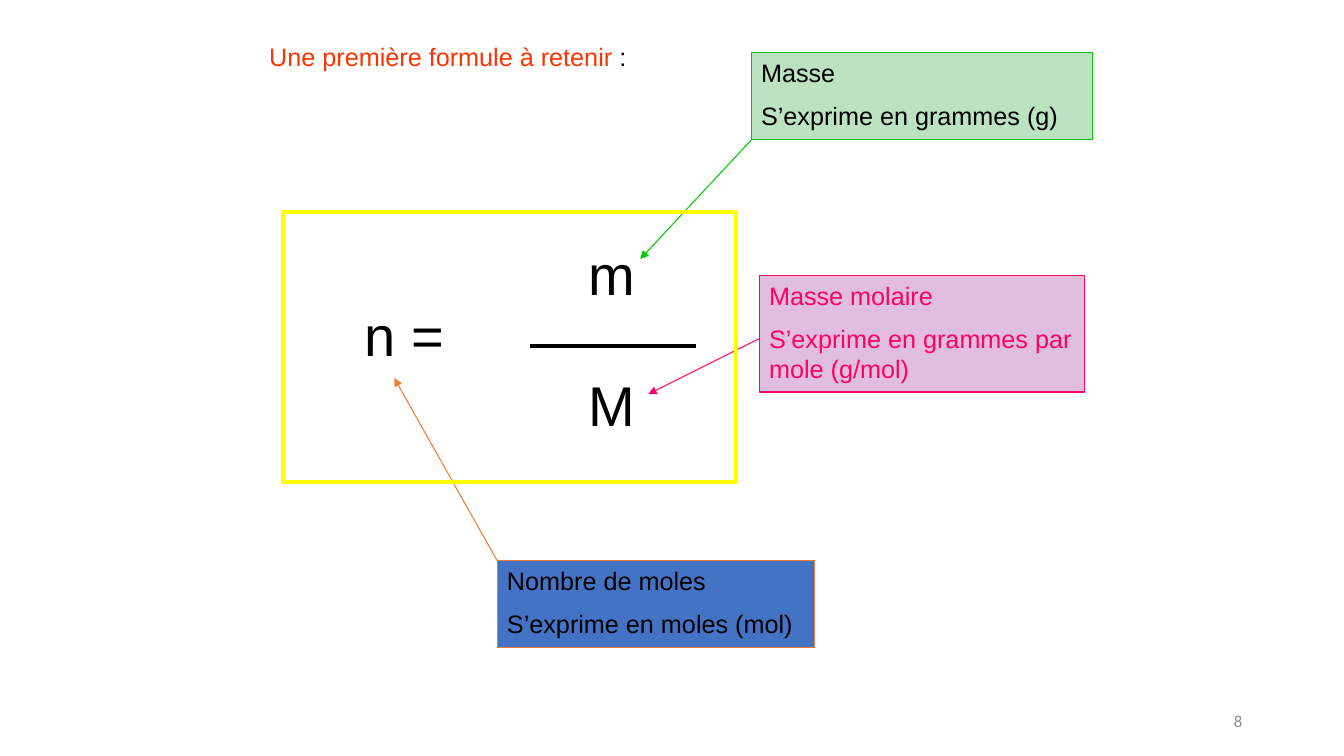
from lxml import etree
from pptx import Presentation
from pptx.dml.color import RGBColor
from pptx.enum import shapes, text
from pptx.oxml import ns
from pptx.util import Inches, Pt

BLACK = RGBColor(0x00, 0x00, 0x00)
RED = RGBColor(0xFF, 0x33, 0x00)
ORANGE = RGBColor(0xED, 0x7D, 0x31)
BLUE = RGBColor(0x44, 0x72, 0xC4)
GREEN = RGBColor(0x00, 0xCC, 0x00)
PALE_GREEN = RGBColor(0xBB, 0xE3, 0xC1)
PINK = RGBColor(0xFF, 0x00, 0x66)
PALE_PINK = RGBColor(0xE1, 0xBD, 0xDE)
YELLOW = RGBColor(0xFF, 0xFF, 0x00)
GREY = RGBColor(0x8C, 0x8C, 0x8C)


class FormulaSlide:
    font = "Arial"
    body_size = 18
    formula_size = 40
    thin, thick = 0.75, 3

    def __init__(self, presentation):
        self.slide = presentation.slides.add_slide(presentation.slide_layouts[5])
        self.shapes = self.slide.shapes

    def fill_text(self, shape, paragraphs, size, font=None,
                  align=text.PP_ALIGN.LEFT, anchor=text.MSO_ANCHOR.TOP):
        """Fill a shape with paragraphs, each a list of (wording, colour) runs."""
        frame = shape.text_frame
        frame.word_wrap = True
        frame.auto_size = text.MSO_AUTO_SIZE.NONE
        frame.vertical_anchor = anchor
        for index, runs in enumerate(paragraphs):
            paragraph = frame.add_paragraph() if index else frame.paragraphs[0]
            paragraph.alignment = align
            paragraph.space_before = Pt(size / 2 if index else 0)
            for wording, colour in runs:
                run = paragraph.add_run()
                run.text = wording
                run.font.name = font or self.font
                run.font.size = Pt(size)
                run.font.color.rgb = colour

    def title(self, left, top, width, height, runs):
        title = self.shapes.title
        title.left, title.top = Inches(left), Inches(top)
        title.width, title.height = Inches(width), Inches(height)
        self.fill_text(title, [runs], self.body_size)

    def label(self, left, top, width, height, wording, size=formula_size,
              colour=BLACK, **style):
        box = self.shapes.add_textbox(
            Inches(left), Inches(top), Inches(width), Inches(height))
        self.fill_text(box, [[(wording, colour)]], size, **style)

    def rectangle(self, left, top, width, height, line, weight, fill=None):
        shape = self.shapes.add_shape(
            shapes.MSO_SHAPE.RECTANGLE,
            Inches(left), Inches(top), Inches(width), Inches(height))
        shape.shadow.inherit = False
        if fill is None:
            shape.fill.background()
        else:
            shape.fill.solid()
            shape.fill.fore_color.rgb = fill
        shape.line.color.rgb = line
        shape.line.width = Pt(weight)
        return shape

    def line(self, start, end, colour, weight, arrow=False):
        connector = self.shapes.add_connector(
            shapes.MSO_CONNECTOR.STRAIGHT, *map(Inches, start + end))
        connector.line.color.rgb = colour
        connector.line.width = Pt(weight)
        properties = connector._element.spPr
        if arrow:
            outline = properties.find(ns.qn("a:ln"))
            etree.SubElement(outline, ns.qn("a:tailEnd"), type="triangle")
        etree.SubElement(properties, ns.qn("a:effectLst"))

    def callout(self, left, top, width, height, lines, fill, line, colour,
                start, end):
        """Draw an explanation box and the arrow from it to its symbol."""
        self.line(start, end, line, self.thin, arrow=True)
        box = self.rectangle(left, top, width, height, line, self.thin, fill)
        self.fill_text(box, [[(wording, colour)] for wording in lines],
                       self.body_size)


def main():
    presentation = Presentation()
    presentation.slide_width = Inches(13.33)
    presentation.slide_height = Inches(7.5)
    formula = FormulaSlide(presentation)

    formula.title(2.57, 0.36, 7.32, 0.4,
                  [("Une première formule à retenir", RED), (" :", BLACK)])

    formula.label(3.52, 2.93, 1.64, 0.77, "n =")
    formula.label(5.74, 2.33, 1.06, 0.77, "m")
    formula.label(5.74, 3.63, 0.87, 0.77, "M")
    formula.line((5.26, 3.43), (6.9, 3.43), BLACK, formula.thick)

    formula.callout(4.93, 5.56, 3.15, 0.86,
                    ["Nombre de moles", "S’exprime en moles (mol)"],
                    BLUE, ORANGE, BLACK, (4.93, 5.56), (3.91, 3.75))
    formula.callout(7.45, 0.52, 3.39, 0.86,
                    ["Masse", "S’exprime en grammes (g)"],
                    PALE_GREEN, GREEN, BLACK, (7.45, 1.39), (6.35, 2.57))
    formula.callout(7.53, 2.73, 3.23, 1.16,
                    ["Masse molaire", "S’exprime en grammes par mole (g/mol)"],
                    PALE_PINK, PINK, PINK, (7.53, 3.36), (6.43, 3.91))

    formula.rectangle(2.81, 2.1, 4.49, 2.68, YELLOW, formula.thick)
    formula.label(9.42, 6.95, 3, 0.4, "8", size=12, colour=GREY, font="Calibri",
                  align=text.PP_ALIGN.RIGHT, anchor=text.MSO_ANCHOR.MIDDLE)

    presentation.save("out.pptx")


if __name__ == "__main__":
    main()
